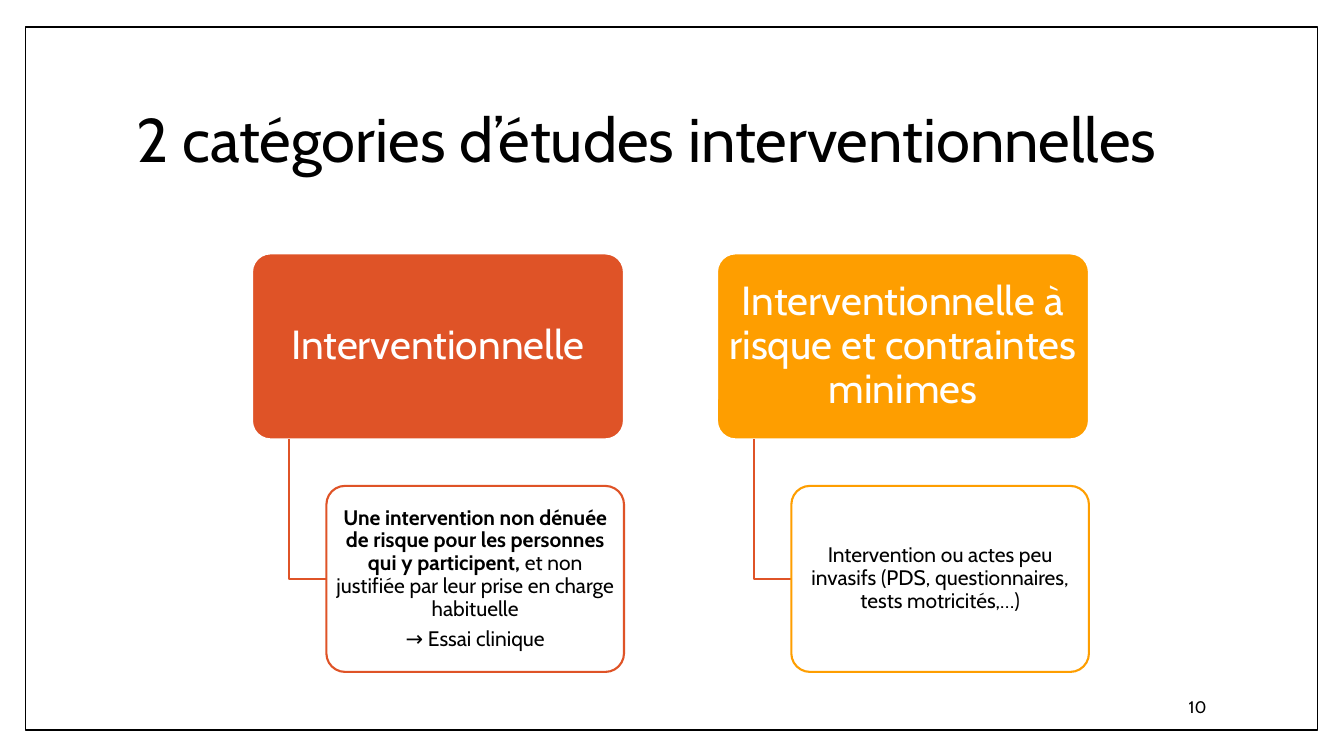
"""Build the slide on the two categories of interventional studies."""
from dataclasses import dataclass

from lxml.etree import SubElement
from pptx import Presentation
from pptx.dml.color import RGBColor as Color
from pptx.enum.shapes import MSO_SHAPE as Shape
from pptx.enum.text import MSO_ANCHOR as Anchor, MSO_AUTO_SIZE as AutoSize, PP_ALIGN as Align
from pptx.oxml.ns import qn
from pptx.util import Pt


@dataclass(frozen=True)
class Theme:
    font: str = "Cabin"
    black: Color = Color(0x00, 0x00, 0x00)
    white: Color = Color(0xFF, 0xFF, 0xFF)
    red: Color = Color(0xDF, 0x53, 0x27)
    orange: Color = Color(0xFE, 0x9E, 0x00)
    title_size: float = 44
    heading_size: float = 29
    detail_size: float = 15
    number_size: float = 12
    line_width: float = 1.5


class SlideBuilder:
    def __init__(self, slide, theme):
        self.slide = slide
        self.theme = theme

    def fill_text(self, shape, paragraphs, size, color, align, line_spacing=0.9, after=0, inset=None):
        frame = shape.text_frame
        frame.word_wrap = True
        frame.auto_size = AutoSize.NONE
        frame.vertical_anchor = Anchor.MIDDLE
        if inset:
            frame.margin_left = frame.margin_right = Pt(inset)
            frame.margin_top = frame.margin_bottom = Pt(inset * 2 / 3)
        for index, runs in enumerate(paragraphs):
            paragraph = frame.add_paragraph() if index else frame.paragraphs[0]
            paragraph.alignment = align
            paragraph.line_spacing = line_spacing
            paragraph.space_before = Pt(0)
            paragraph.space_after = Pt(after)
            for text, bold in runs:
                run = paragraph.add_run()
                run.text = text
                run.font.name = self.theme.font
                run.font.size = Pt(size)
                run.font.bold = bold
                run.font.color.rgb = color

    def title(self, text, left, top, width, height):
        title = self.slide.shapes.title
        title.left, title.top, title.width, title.height = map(Pt, (left, top, width, height))
        self.fill_text(title, [[(text, False)]], self.theme.title_size, self.theme.black, Align.LEFT)

    def number(self, text, left, top, width, height):
        box = self.slide.shapes.add_textbox(*map(Pt, (left, top, width, height)))
        self.fill_text(box, [[(text, False)]], self.theme.number_size, self.theme.black,
                       Align.RIGHT, line_spacing=1, after=6)

    def box(self, kind, left, top, width, height, fill, line, line_width):
        shape = self.slide.shapes.add_shape(kind, *map(Pt, (left, top, width, height)))
        shape.shadow.inherit = False
        shape.fill.solid()
        shape.fill.fore_color.rgb = fill
        shape.line.color.rgb = line
        shape.line.width = Pt(line_width)
        return shape

    def border(self, left, top, width, height):
        border = self.box(Shape.RECTANGLE, left, top, width, height,
                          self.theme.white, self.theme.black, 1)
        border.element.getparent().insert(2, border.element)

    def card(self, left, top, width, height, fill, line, paragraphs, size, color, inset):
        card = self.box(Shape.ROUNDED_RECTANGLE, left, top, width, height,
                        fill, line, self.theme.line_width)
        card.adjustments[0] = 0.1
        self.fill_text(card, paragraphs, size, color, Align.CENTER, after=size * 0.35, inset=inset)
        return card

    def elbow(self, left, top, right, bottom):
        outline = self.slide.shapes.build_freeform(Pt(left), Pt(top))
        outline.add_line_segments([(Pt(left), Pt(bottom)), (Pt(right), Pt(bottom))], close=False)
        elbow = outline.convert_to_shape()
        elbow.shadow.inherit = False
        elbow.fill.background()
        elbow.line.color.rgb = self.theme.red
        elbow.line.width = Pt(self.theme.line_width)

    def category(self, left, top, width, color, heading, details):
        theme = self.theme
        height = width / 2
        detail_left = left + width / 5
        detail_top = top + height * 1.25
        self.card(left, top, width, height, color, theme.white, [[(heading, False)]],
                  theme.heading_size, theme.white, 4.2)
        self.elbow(left + width / 10, top + height, detail_left, detail_top + height / 2)
        detail = self.card(detail_left, detail_top, width * 0.8, height, theme.white, color,
                           details, theme.detail_size, theme.black, 2.2)
        fill_color = detail.element.spPr.find(qn("a:solidFill"))[0]
        SubElement(fill_color, qn("a:alpha"), val="90000")


def main():
    presentation = Presentation()
    presentation.slide_width, presentation.slide_height = Pt(960), Pt(540)
    theme = Theme()
    slide = presentation.slides.add_slide(presentation.slide_layouts[5])
    builder = SlideBuilder(slide, theme)

    builder.border(18, 19.4, 923, 502)
    builder.title("2 catégories d’études interventionnelles", 90, 48.2, 777.6, 106.6)
    builder.number("10", 734.4, 490.3, 134.6, 28.8)

    categories = [
        (theme.red, "Interventionnelle", [
            [("Une intervention non dénuée de risque pour les personnes qui y participent,", True),
             (" et non justifiée par leur prise en charge habituelle", False)],
            [("→ Essai clinique", False)],
        ]),
        (theme.orange, "Interventionnelle à risque et contraintes minimes", [
            [("Intervention ou actes peu invasifs (PDS, questionnaires, tests motricités,…)", False)],
        ]),
    ]
    width = 265.7
    for index, (color, heading, details) in enumerate(categories):
        builder.category(180 + index * width * 1.25, 181, width, color, heading, details)

    presentation.save("out.pptx")


if __name__ == "__main__":
    main()
